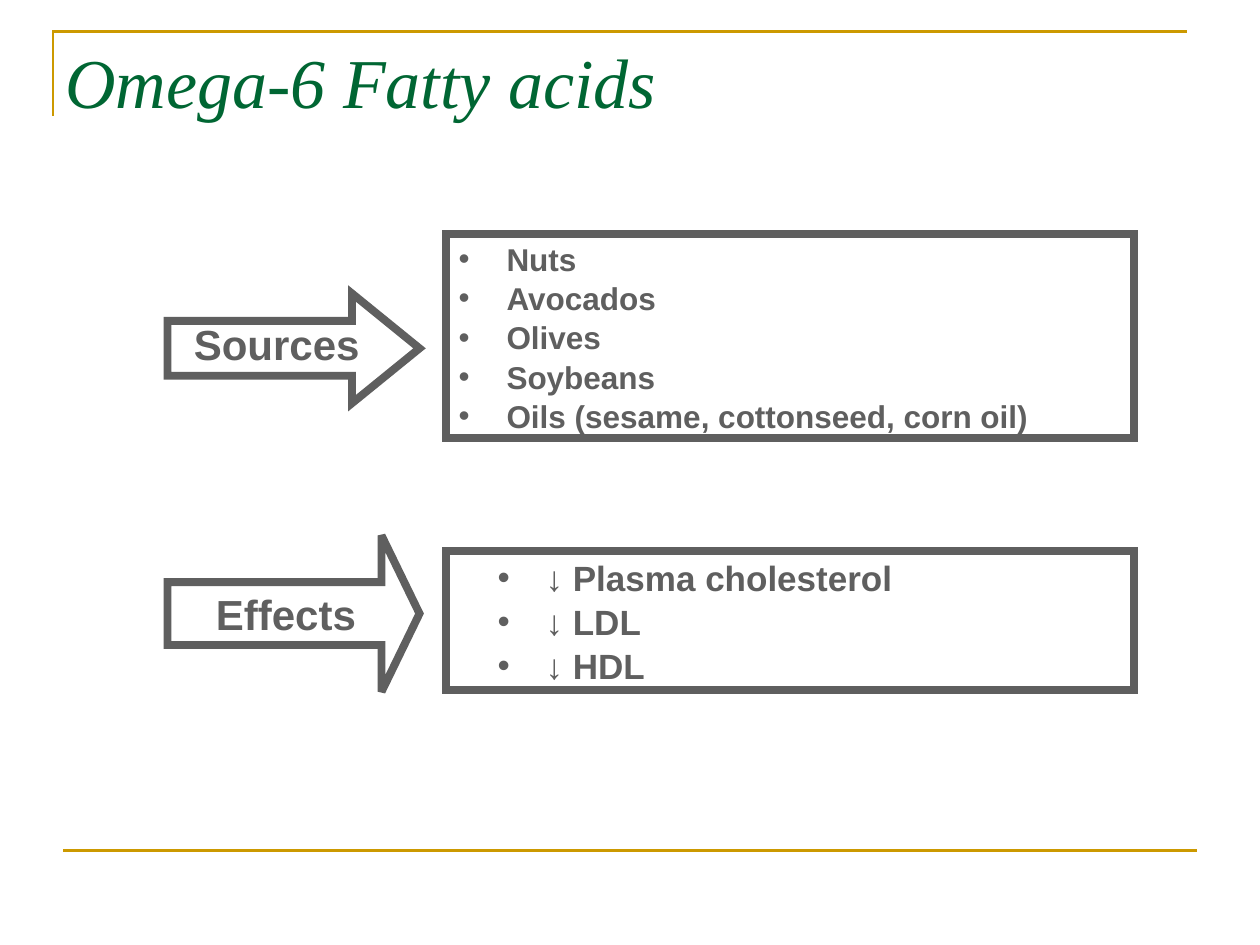
from lxml import etree
from pptx import Presentation
from pptx import util as u
from pptx.dml.color import RGBColor
from pptx.enum import shapes, text
from pptx.oxml import ns

GREY, GOLD, GREEN = "5F5F5F", "CC9900", "006633"
ARROW_LEFT, ARROW_WIDTH = 1.33, 2
LIST_LEFT, LIST_WIDTH = 3.54, 5.46
HANGING = 0.38
SOURCES = ["Nuts", "Avocados", "Olives", "Soybeans",
           "Oils (sesame, cottonseed, corn oil)"]
EFFECTS = ["↓ Plasma cholesterol", "↓ LDL", "↓ HDL"]


def color(value):
    """Turn a hex string into a colour."""
    return RGBColor.from_string(value)


def set_font(para, name, size, value, bold=False, italic=False):
    """Format the font of a whole paragraph."""
    font = para.font
    font.name, font.size = name, u.Pt(size)
    font.bold, font.italic = bold, italic
    font.color.rgb = color(value)


def place(box, left, top, width, height):
    """Position a box by lengths in inches."""
    box.left, box.top = u.Inches(left), u.Inches(top)
    box.width, box.height = u.Inches(width), u.Inches(height)


def outline(box, value, width):
    """Give a box a sharp-cornered outline and no fill."""
    box.fill.background()
    box.line.color.rgb = color(value)
    box.line.width = u.Pt(width)
    etree.SubElement(box.line._ln, ns.qn("a:miter"), lim="800000")


def add_rules(page):
    """Draw the corner rule above the title and the rule at the foot."""
    builder = page.shapes.build_freeform(
        u.Inches(0.42), u.Inches(0.92), scale=1)
    corner = [(u.Inches(x), u.Inches(0.25)) for x in (0.42, 9.42)]
    builder.add_line_segments(corner, close=False)
    bracket = builder.convert_to_shape()
    bracket.shadow.inherit = False
    outline(bracket, GOLD, 1.5)
    foot = page.shapes.add_connector(
        shapes.MSO_CONNECTOR.STRAIGHT,
        u.Inches(0.5), u.Inches(6.75), u.Inches(9.5), u.Inches(6.75))
    foot.line.color.rgb = color(GOLD)
    foot.line.width = u.Pt(1.5)
    etree.SubElement(foot._element.spPr, ns.qn("a:effectLst"))


def fill_title(title, words):
    """Write the slide title."""
    place(title, 0.42, 0.25, 5.6, 0.77)
    frame = title.text_frame
    frame.text = words
    frame.vertical_anchor = text.MSO_ANCHOR.BOTTOM
    para = frame.paragraphs[0]
    para.alignment = text.PP_ALIGN.LEFT
    set_font(para, "Times New Roman", 40, GREEN, italic=True)


def add_arrow(page, label, top, height, adjustments, spacing=1.0):
    """Add a labelled block arrow."""
    arrow = page.shapes.add_shape(
        shapes.MSO_SHAPE.RIGHT_ARROW, u.Inches(ARROW_LEFT), u.Inches(top),
        u.Inches(ARROW_WIDTH), u.Inches(height))
    for index, value in enumerate(adjustments):
        arrow.adjustments[index] = value
    arrow.shadow.inherit = False
    outline(arrow, GREY, 4.5)
    frame = arrow.text_frame
    frame.text = label
    frame.word_wrap = True
    frame.vertical_anchor = text.MSO_ANCHOR.MIDDLE
    para = frame.paragraphs[0]
    para.alignment = text.PP_ALIGN.CENTER
    para.line_spacing = spacing
    set_font(para, "Arial", 24, GREY, bold=True)


def fill_list(body, items, top, height, size, margin):
    """Turn a body placeholder into a framed bullet list."""
    place(body, LIST_LEFT, top, LIST_WIDTH, height)
    outline(body, GREY, 4.5)
    frame = body.text_frame
    frame.text = "\n".join(items)
    frame.vertical_anchor = text.MSO_ANCHOR.MIDDLE
    frame.auto_size = text.MSO_AUTO_SIZE.NONE
    for para in frame.paragraphs:
        para.space_before = u.Pt(0)
        para.line_spacing = 1.04
        properties = para._p.get_or_add_pPr()
        properties.set("marL", str(u.Inches(margin)))
        properties.set("indent", str(u.Inches(-HANGING)))
        etree.SubElement(properties, ns.qn("a:buChar"), char="•")
        set_font(para, "Arial", size, GREY, bold=True)


def main():
    """Build the slide and save it."""
    deck = Presentation()
    deck.slide_width, deck.slide_height = u.Inches(10), u.Inches(7.5)
    page = deck.slides.add_slide(deck.slide_layouts.get_by_name("Two Content"))
    title, sources, effects = list(page.placeholders)[:3]
    add_rules(page)
    fill_title(title, "Omega-6 Fatty acids")
    add_arrow(page, "Sources", 2.33, 0.87, (0.5, 0.615), spacing=0.8)
    fill_list(sources, SOURCES, 1.86, 1.62, 18, HANGING)
    add_arrow(page, "Effects", 4.25, 1.24, (0.403, 0.243))
    fill_list(effects, EFFECTS, 4.37, 1.11, 20, 0.69)
    deck.save("out.pptx")


if __name__ == "__main__":
    main()
